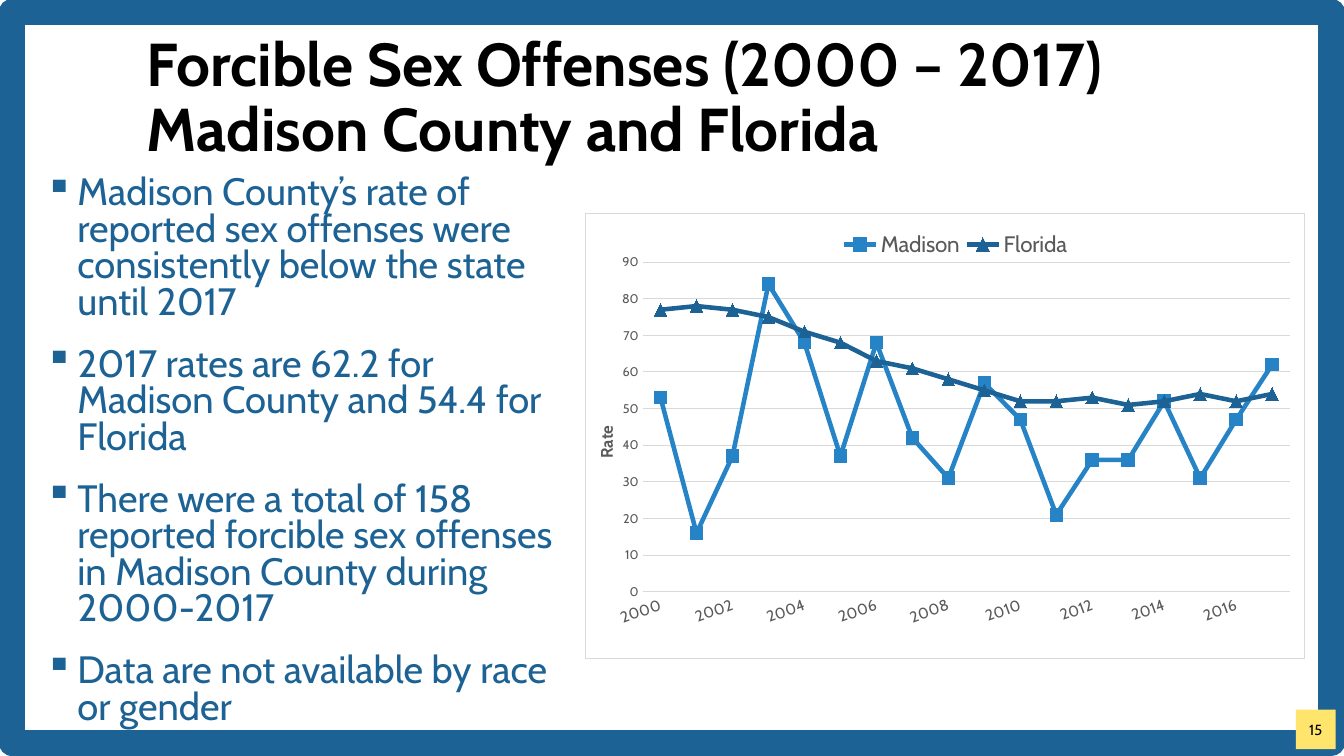
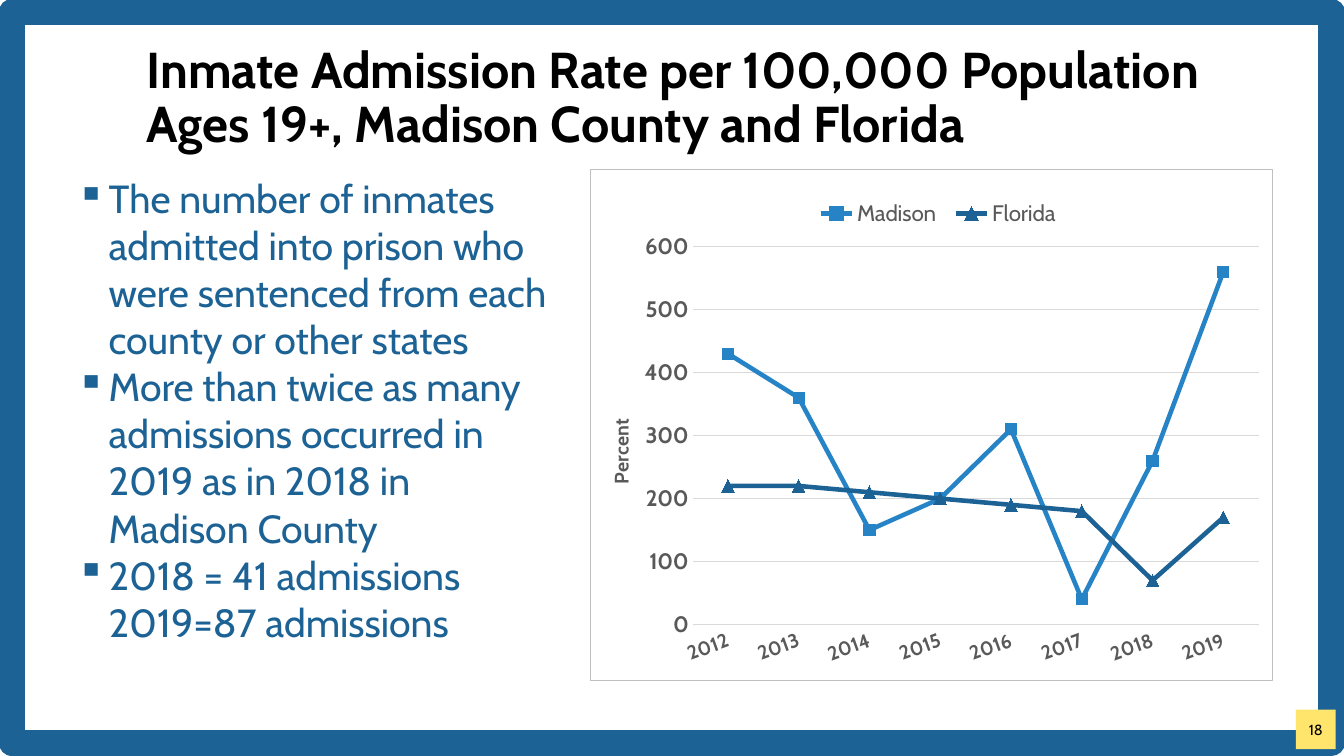
from lxml import etree
from pptx import Presentation
from pptx.chart.data import CategoryChartData
from pptx.dml.color import RGBColor
from pptx.enum.chart import XL_CHART_TYPE, XL_LEGEND_POSITION, XL_MARKER_STYLE, XL_TICK_MARK
from pptx.enum.shapes import MSO_SHAPE
from pptx.enum.text import MSO_ANCHOR, PP_ALIGN
from pptx.oxml.ns import qn
from pptx.util import Cm, Pt

LINE_CHART = XL_CHART_TYPE.LINE_MARKERS
LEGEND_BOTTOM = XL_LEGEND_POSITION.BOTTOM
SQUARE, TRIANGLE = XL_MARKER_STYLE.SQUARE, XL_MARKER_STYLE.TRIANGLE
NO_TICK = XL_TICK_MARK.NONE
RECTANGLE = MSO_SHAPE.RECTANGLE
MIDDLE, CENTER = MSO_ANCHOR.MIDDLE, PP_ALIGN.CENTER

COLORS = {
    "navy": "1C6294", "blue": "2683C6", "yellow": "FFE56B", "black": "000000",
    "gray": "595959", "grid": "D9D9D9", "border": "BFBFBF",
}
FONT = "Cabin"
SERIES_STYLES = {"Madison": ("blue", SQUARE), "Florida": ("navy", TRIANGLE)}


def color(name):
    """Return a palette colour."""
    return RGBColor.from_string(COLORS[name])


def style_font(font, size, name, bold=False):
    """Apply the deck's typeface with a size, colour and weight."""
    font.name, font.size, font.bold = FONT, Pt(size), bold
    font.color.rgb = color(name)


def place(chart, parent_path, previous_path, box, inner=False):
    """Give a chart part a manual position as fractions of the chart."""
    parent = chart.element.xpath(parent_path)[0]
    for old in parent.findall(qn("c:layout")):
        parent.remove(old)
    layout = etree.Element(qn("c:layout"))
    manual = etree.SubElement(layout, qn("c:manualLayout"))
    settings = [("layoutTarget", "inner")] if inner else []
    settings += [("xMode", "edge"), ("yMode", "edge")]
    settings += zip("xywh", box)
    for tag, value in settings:
        etree.SubElement(manual, qn(f"c:{tag}")).set("val", str(value))
    if previous_path:
        parent.xpath(previous_path)[0].addnext(layout)
    else:
        parent.insert(0, layout)


class Deck:
    """Holds the shared style and the current slide."""

    def __init__(self):
        """Start a widescreen presentation."""
        self.presentation = Presentation()
        self.presentation.slide_width = Cm(33.87)
        self.presentation.slide_height = Cm(19.05)
        self.slide = None

    def add_slide(self, number):
        """Add a framed slide with its number."""
        self.slide = self.presentation.slides.add_slide(self.presentation.slide_layouts[6])
        frame = self.rectangle(0.3, 0.3, 33.25, 18.42)
        frame.fill.background()
        frame.line.color.rgb = color("navy")
        frame.line.width = Pt(19)
        badge = self.rectangle(32.66, 17.88, 1, 1)
        badge.fill.solid()
        badge.fill.fore_color.rgb = color("yellow")
        badge.line.fill.background()
        text_frame = badge.text_frame
        text_frame.margin_left = text_frame.margin_right = 0
        text_frame.vertical_anchor = MIDDLE
        paragraph = text_frame.paragraphs[0]
        paragraph.alignment = CENTER
        self.run(paragraph, str(number), 10.5, "black")

    def rectangle(self, *box):
        """Add a rectangle without a shadow."""
        shape = self.slide.shapes.add_shape(RECTANGLE, *map(Cm, box))
        shape.shadow.inherit = False
        return shape

    def text_frame(self, *box):
        """Add a wrapping text box and return its text frame."""
        text_frame = self.slide.shapes.add_textbox(*map(Cm, box)).text_frame
        text_frame.word_wrap = True
        return text_frame

    def run(self, paragraph, text, size, name, bold=False):
        """Add one styled run."""
        run = paragraph.add_run()
        run.text = text
        style_font(run.font, size, name, bold)

    def title(self, lines, size):
        """Add the bold slide title."""
        text_frame = self.text_frame(3.45, 1.17, 29.21, 2.67)
        text_frame.vertical_anchor = MIDDLE
        paragraph = text_frame.paragraphs[0]
        paragraph.line_spacing = 0.9
        for index, line in enumerate(lines):
            if index:
                paragraph.add_line_break()
            self.run(paragraph, line, size, "black", True)

    def bullets(self, box, items, size, line_spacing=1.0, space_after=0):
        """Add a bulleted list."""
        text_frame = self.text_frame(*box)
        for index, item in enumerate(items):
            paragraph = text_frame.add_paragraph() if index else text_frame.paragraphs[0]
            properties = paragraph._p.get_or_add_pPr()
            properties.set("marL", str(Cm(0.94)))
            properties.set("indent", str(Cm(-0.81)))
            bullet_color = etree.SubElement(properties, qn("a:buClr"))
            etree.SubElement(bullet_color, qn("a:srgbClr")).set("val", COLORS["navy"])
            etree.SubElement(properties, qn("a:buChar")).set("char", "▪")
            paragraph.line_spacing = line_spacing
            paragraph.space_after = Pt(space_after)
            self.run(paragraph, item, size, "navy")

    def line_chart(self, box, years, values, border, plot, legend, maximum, step,
                   axis_title, title_size, title_place, year_size, value_size,
                   bold_labels=False, label_skip=1, square_size=9):
        """Add a line chart comparing Madison with Florida."""
        data = CategoryChartData()
        data.categories = [str(year) for year in years]
        for name, numbers in zip(SERIES_STYLES, values):
            data.add_series(name, numbers)
        chart = self.slide.shapes.add_chart(LINE_CHART, *map(Cm, box), data).chart
        style_font(chart.font, 10, "black")
        chart.has_title = False
        chart.plots[0].vary_by_categories = False
        for series in chart.plots[0].series:
            name, marker_style = SERIES_STYLES[series.name]
            series.smooth = False
            series.format.line.color.rgb = color(name)
            series.format.line.width = Pt(3.25)
            marker = series.marker
            marker.style = marker_style
            marker.size = square_size if marker_style == SQUARE else 9
            marker.format.fill.solid()
            marker.format.fill.fore_color.rgb = color(name)
            marker.format.line.color.rgb = color(name)

        category_axis, value_axis = chart.category_axis, chart.value_axis
        for axis, size in ((category_axis, year_size), (value_axis, value_size)):
            axis.major_tick_mark = axis.minor_tick_mark = NO_TICK
            style_font(axis.tick_labels.font, size, "gray", bold_labels)
        value_axis.minimum_scale, value_axis.maximum_scale = 0, maximum
        value_axis.major_unit = step
        value_axis.format.line.fill.background()
        for line in (category_axis.format.line, value_axis.major_gridlines.format.line):
            line.color.rgb = color("grid")
            line.width = Pt(0.75)
        paragraph = value_axis.axis_title.text_frame.paragraphs[0]
        self.run(paragraph, axis_title, title_size, "gray", True)
        chart.has_legend = True
        chart.legend.position = LEGEND_BOTTOM
        chart.legend.include_in_layout = False
        style_font(chart.legend.font, 16, "gray")

        space = chart.element
        space.xpath(".//c:catAx/c:txPr/a:bodyPr")[0].set("rot", "-1200000")
        title_body = space.xpath(".//c:valAx/c:title//a:bodyPr")[0]
        title_body.set("rot", "-5400000")
        title_body.set("vert", "horz")
        skip = etree.Element(qn("c:tickLblSkip"))
        skip.set("val", str(label_skip))
        space.xpath(".//c:catAx/c:noMultiLvlLbl")[0].addprevious(skip)
        shape_properties = etree.Element(qn("c:spPr"))
        outline = etree.SubElement(shape_properties, qn("a:ln"), w=str(Pt(0.75)))
        fill = etree.SubElement(outline, qn("a:solidFill"))
        etree.SubElement(fill, qn("a:srgbClr")).set("val", COLORS[border])
        space.xpath("./c:txPr")[0].addprevious(shape_properties)
        place(chart, ".//c:plotArea", None, plot, inner=True)
        place(chart, ".//c:legend", "./c:legendPos", legend)
        place(chart, ".//c:valAx/c:title", "./c:tx", title_place)


def main():
    """Build and save the two slides."""
    deck = Deck()
    deck.add_slide(15)
    deck.title(["Forcible Sex Offenses (2000 – 2017)", "Madison County and Florida"], 43.2)
    deck.bullets((0.76, 4.32, 13.97, 13.59), [
        "Madison County’s rate of reported sex offenses were consistently below the state until 2017",
        "2017 rates are 62.2 for Madison County and 54.4 for Florida",
        "There were a total of 158 reported forcible sex offenses in Madison County during 2000-2017",
        "Data are not available by race or gender",
    ], 27.2, line_spacing=0.8, space_after=18)
    deck.line_chart(
        (14.73, 5.36, 18.16, 11.25), range(2000, 2018),
        [(53, 16, 37, 84, 68, 37, 68, 42, 31, 57, 47, 21, 36, 36, 52, 31, 47, 62),
         (77, 78, 77, 75, 71, 68, 63, 61, 58, 55, 52, 52, 53, 51, 52, 54, 52, 54)],
        border="grid", plot=(0.08, 0.11, 0.9, 0.74), legend=(0.35, 0.03, 0.33, 0.08),
        maximum=90, step=10, axis_title="Rate", title_size=12, title_place=(0.01, 0.47),
        year_size=11, value_size=9, label_skip=2)

    deck.add_slide(18)
    deck.title(["Inmate Admission Rate per 100,000 Population",
                "Ages 19+, Madison County and Florida"], 36)
    deck.bullets((1.55, 4.27, 12.75, 12.7), [
        "The number of inmates admitted into prison who were sentenced from each county or other states",
        "More than twice as many admissions occurred in 2019 as in 2018 in Madison County",
        "2018 = 41 admissions 2019=87 admissions",
    ], 28)
    deck.line_chart(
        (14.86, 4.27, 17.22, 12.9), range(2012, 2020),
        [(430, 360, 150, 200, 310, 40, 260, 560),
         (220, 220, 210, 200, 190, 180, 70, 170)],
        border="border", plot=(0.15, 0.15, 0.83, 0.74), legend=(0.32, 0.05, 0.38, 0.07),
        maximum=600, step=100, axis_title="Percent", title_size=14, title_place=(0.02, 0.48),
        year_size=14, value_size=16, bold_labels=True, square_size=8)
    deck.presentation.save("out.pptx")


if __name__ == "__main__":
    main()
